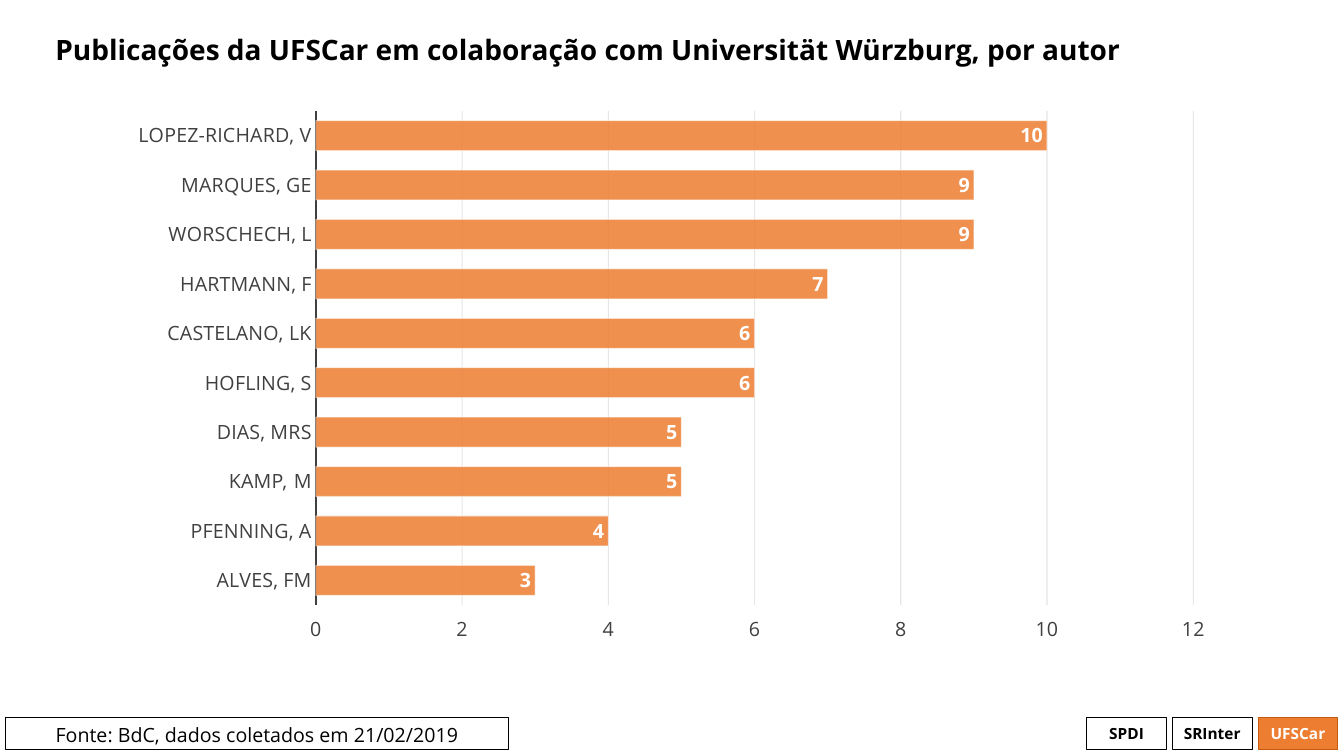
from dataclasses import dataclass

from lxml import etree
from pptx import Presentation
from pptx.chart.data import CategoryChartData
from pptx.dml.color import RGBColor
from pptx.enum.chart import (XL_CHART_TYPE, XL_LABEL_POSITION,
                             XL_TICK_LABEL_POSITION, XL_TICK_MARK)
from pptx.enum.shapes import MSO_SHAPE
from pptx.enum.text import MSO_ANCHOR, PP_ALIGN
from pptx.oxml.ns import qn
from pptx.util import Pt

RECTANGLE = MSO_SHAPE.RECTANGLE
MIDDLE, TOP = MSO_ANCHOR.MIDDLE, MSO_ANCHOR.TOP
CENTER = PP_ALIGN.CENTER
BAR_CLUSTERED = XL_CHART_TYPE.BAR_CLUSTERED
INSIDE_END = XL_LABEL_POSITION.INSIDE_END
NO_TICKS = XL_TICK_MARK.NONE
HIGH = XL_TICK_LABEL_POSITION.HIGH


@dataclass(frozen=True)
class Theme:
    font: str = "Open Sans"
    black: str = "000000"
    white: str = "FFFFFF"
    axis: str = "404040"
    grid: str = "0D0D0D"
    orange: str = "ED7D31"
    dark_orange: str = "C55A11"
    title_size: float = 20
    body_size: float = 14
    tag_size: float = 11


THEME = Theme()


@dataclass(frozen=True)
class FooterBox:
    text: str
    left: float
    width: float
    size: float = THEME.tag_size
    bold: bool = True
    anchor: MSO_ANCHOR = MIDDLE
    fill: str = ""
    line: str = THEME.black
    color: str = THEME.black


FOOTER_TOP, FOOTER_HEIGHT = 512.6, 23
TAG_LEFT, TAG_WIDTH, TAG_PITCH = 776.2, 57, 61.2

FOOTER = [
    FooterBox("SPDI", TAG_LEFT, TAG_WIDTH),
    FooterBox("SRInter", TAG_LEFT + TAG_PITCH, TAG_WIDTH),
    FooterBox("UFSCar", TAG_LEFT + 2 * TAG_PITCH, TAG_WIDTH, fill=THEME.orange,
              line=THEME.dark_orange, color=THEME.white),
    FooterBox("Fonte: BdC, dados coletados em 21/02/2019", 4, 359.3,
              size=THEME.body_size, bold=False, anchor=TOP),
]

PUBLICATIONS = {
    "LOPEZ-RICHARD, V": 10,
    "MARQUES, GE": 9,
    "WORSCHECH, L": 9,
    "HARTMANN, F": 7,
    "CASTELANO, LK": 6,
    "HOFLING, S": 6,
    "DIAS, MRS": 5,
    "KAMP, M": 5,
    "PFENNING, A": 4,
    "ALVES, FM": 3,
}

# Inner plot area as fractions of the chart
PLOT_LAYOUT = {"x": 0.18, "y": 0.02, "w": 0.79, "h": 0.89}


def rgb(code: str) -> RGBColor:
    return RGBColor.from_string(code)


def style_font(font, size: float, color: str, bold: bool = False) -> None:
    font.name = THEME.font
    font.size = Pt(size)
    font.bold = bold
    font.color.rgb = rgb(color)


def style_line(line, color: str, width: float) -> None:
    line.color.rgb = rgb(color)
    line.width = Pt(width)


def set_opacity(element, color_query: str, percent: int) -> None:
    for color in element.xpath(color_query):
        etree.SubElement(color, qn("a:alpha")).set("val", str(percent * 1000))


def set_plot_layout(chart) -> None:
    plot_area = chart._chartSpace.xpath("c:chart/c:plotArea")[0]
    for old_layout in plot_area.findall(qn("c:layout")):
        plot_area.remove(old_layout)
    layout = etree.Element(qn("c:layout"))
    manual = etree.SubElement(layout, qn("c:manualLayout"))
    settings = {"layoutTarget": "inner", "xMode": "edge", "yMode": "edge",
                **PLOT_LAYOUT}
    for tag, value in settings.items():
        etree.SubElement(manual, qn(f"c:{tag}")).set("val", str(value))
    plot_area.insert(0, layout)


def add_title(page, text: str) -> None:
    box = page.shapes.add_textbox(Pt(32.4), Pt(4.3), Pt(893.5), Pt(65.5))
    frame = box.text_frame
    frame.word_wrap = True
    frame.vertical_anchor = MIDDLE
    para = frame.paragraphs[0]
    para.text = text
    para.line_spacing = 0.9
    style_font(para.font, THEME.title_size, THEME.black, bold=True)


def add_footer_box(page, item: FooterBox) -> None:
    box = page.shapes.add_shape(RECTANGLE, Pt(item.left), Pt(FOOTER_TOP),
                                Pt(item.width), Pt(FOOTER_HEIGHT))
    box.shadow.inherit = False
    if item.fill:
        box.fill.solid()
        box.fill.fore_color.rgb = rgb(item.fill)
    else:
        box.fill.background()
    style_line(box.line, item.line, 0.75)
    frame = box.text_frame
    frame.word_wrap = True
    frame.margin_left = frame.margin_right = 0
    frame.vertical_anchor = item.anchor
    para = frame.paragraphs[0]
    para.text = item.text
    para.alignment = CENTER
    style_font(para.font, item.size, item.color, item.bold)


def add_author_chart(page) -> None:
    data = CategoryChartData()
    data.categories = list(PUBLICATIONS)
    data.add_series("Publicações", list(PUBLICATIONS.values()))
    chart = page.shapes.add_chart(BAR_CLUSTERED, Pt(82.8), Pt(71.3),
                                  Pt(793.4), Pt(396.7), data).chart
    chart.has_title = False
    chart.has_legend = False
    style_font(chart.font, THEME.body_size, THEME.black)
    set_plot_layout(chart)

    # Axes: authors run downwards, value labels stay at the bottom
    authors, counts = chart.category_axis, chart.value_axis
    for axis in (authors, counts):
        axis.major_tick_mark = axis.minor_tick_mark = NO_TICKS
        style_font(axis.tick_labels.font, THEME.body_size, THEME.axis)
    authors.reverse_order = True
    style_line(authors.format.line, THEME.axis, 1.5)
    counts.tick_label_position = HIGH
    counts.minimum_scale, counts.maximum_scale, counts.major_unit = 0, 12, 2
    counts.format.line.fill.background()
    counts.has_major_gridlines = True
    style_line(counts.major_gridlines.format.line, THEME.grid, 0.75)
    set_opacity(counts._element, "c:majorGridlines//a:srgbClr", 10)

    # Bars and their values
    plot = chart.plots[0]
    plot.gap_width = 65
    plot.vary_by_categories = False
    bars = plot.series[0]
    bars.format.fill.solid()
    bars.format.fill.fore_color.rgb = rgb(THEME.orange)
    style_line(bars.format.line, THEME.white, 0.75)
    set_opacity(bars._element, "c:spPr/a:solidFill/a:srgbClr", 85)
    set_opacity(bars._element, "c:spPr/a:ln/a:solidFill/a:srgbClr", 50)
    labels = bars.data_labels
    labels.show_value = True
    labels.position = INSIDE_END
    style_font(labels.font, THEME.body_size, THEME.white, bold=True)


def main() -> None:
    deck = Presentation()
    deck.slide_width, deck.slide_height = Pt(960), Pt(540)
    page = deck.slides.add_slide(deck.slide_layouts[6])
    for item in FOOTER:
        add_footer_box(page, item)
    add_title(page, "Publicações da UFSCar em colaboração com "
                    "Universität Würzburg, por autor")
    add_author_chart(page)
    deck.save("out.pptx")


if __name__ == "__main__":
    main()
